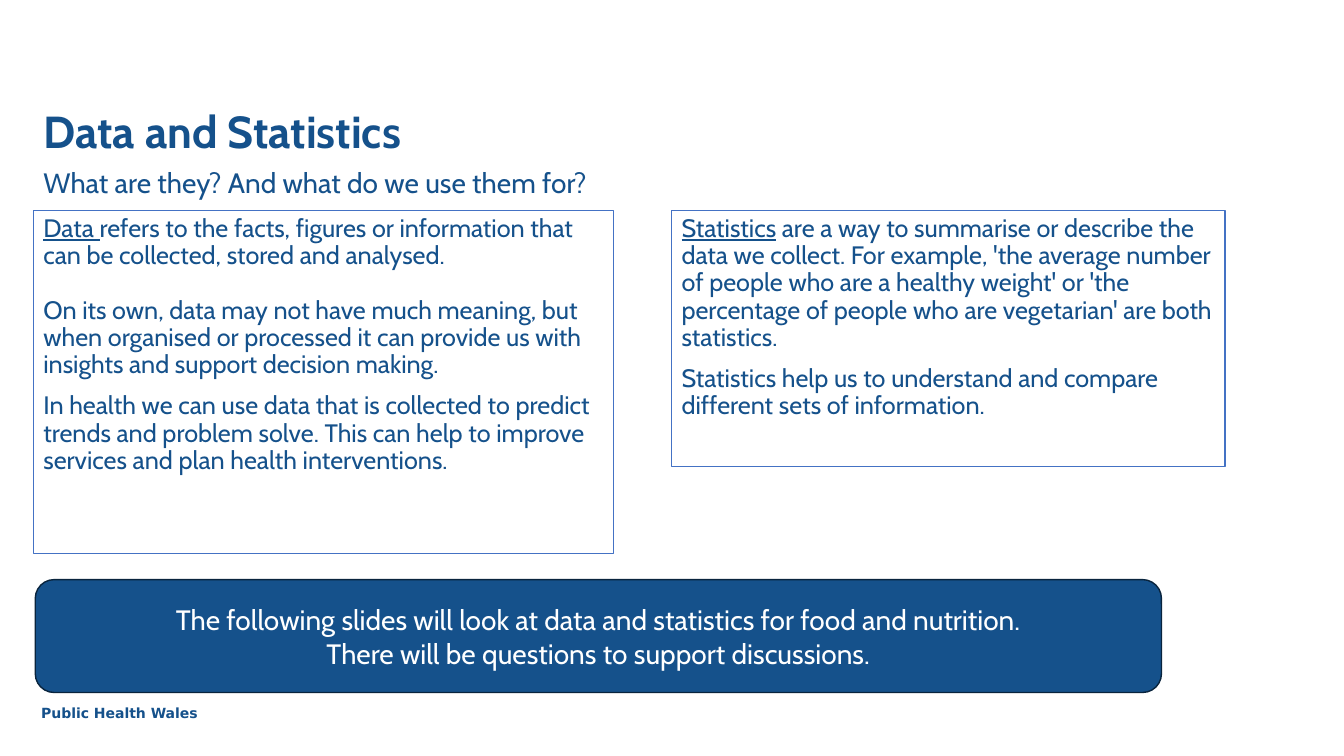
from pptx import Presentation
from pptx.dml.color import RGBColor
from pptx.enum.shapes import MSO_SHAPE
from pptx.enum.text import MSO_ANCHOR, MSO_AUTO_SIZE, PP_ALIGN
from pptx.oxml import parse_xml
from pptx.oxml.ns import nsdecls
from pptx.util import Inches, Pt

NAVY, OUTLINE, BANNER_EDGE, WHITE = "15518B", "4472C4", "09243D", "FFFFFF"


def color(hex_value):
    return RGBColor.from_string(hex_value)


def fill_text(shape, place, paragraphs, size, ink=NAVY, font="Cabin", bold=False,
              anchor=MSO_ANCHOR.TOP, align=PP_ALIGN.LEFT, line_spacing=0.9):
    """Place a shape and write (space before, [(text, underlined), ...]) paragraphs."""
    shape.left, shape.top, shape.width, shape.height = map(Inches, place)
    frame = shape.text_frame
    frame.word_wrap = True
    frame.auto_size = MSO_AUTO_SIZE.NONE
    frame.vertical_anchor = anchor
    for number, (gap, runs) in enumerate(paragraphs):
        paragraph = frame.add_paragraph() if number else frame.paragraphs[0]
        properties = paragraph._p.get_or_add_pPr()
        properties.set("marL", "0")
        properties.set("indent", "0")
        properties.append(parse_xml(f"<a:buNone {nsdecls('a')}/>"))
        paragraph.alignment = align
        paragraph.line_spacing = line_spacing
        paragraph.space_before = Pt(gap)
        paragraph.font.name = font
        paragraph.font.size = Pt(size)
        paragraph.font.bold = bold
        paragraph.font.color.rgb = color(ink)
        for text, underlined in runs:
            run = paragraph.add_run()
            run.text = text
            if underlined:
                run.font.underline = True


deck = Presentation()
deck.slide_width, deck.slide_height = Inches(13.33), Inches(7.5)
slide = deck.slides.add_slide(deck.slide_layouts.get_by_name("Comparison"))
title, subtitle, data_box, spare, statistics_box = slide.placeholders
spare.element.getparent().remove(spare.element)

fill_text(title, (0.33, 0.89, 4.85, 0.73), [(0, [("Data and Statistics", False)])],
          32, bold=True, anchor=MSO_ANCHOR.BOTTOM)
fill_text(subtitle, (0.33, 1.63, 6.7, 0.4),
          [(0, [("What are they? And what do we use them for?", False)])], 20)

definitions = [
    (data_box, (0.33, 2.09, 5.76, 3.4), [
        (0, [("Data ", True),
             ("refers to the facts, figures or information that can be collected, "
              "stored and analysed.", False)]),
        (19.5, [("On its own, data may not have much meaning, but when organised or "
                 "processed it can provide us with insights and support decision making.",
                 False)]),
        (10, [("In health we can use data that is collected to predict trends and problem "
               "solve. This can help to improve services and plan health interventions.",
               False)]),
    ]),
    (statistics_box, (6.66, 2.09, 5.49, 2.54), [
        (0, [("Statistics", True),
             (" are a way to summarise or describe the data we collect. For example, "
              "'the average number of people who are a healthy weight' or 'the percentage "
              "of people who are vegetarian' are both statistics.", False)]),
        (10, [("Statistics help us to understand and compare different sets of "
               "information.", False)]),
    ]),
]
for box, place, paragraphs in definitions:
    fill_text(box, place, paragraphs, 18)
    box.line.color.rgb = color(OUTLINE)
    box.line.width = Pt(0.75)

banner = slide.shapes.add_shape(MSO_SHAPE.ROUNDED_RECTANGLE, 0, 0, 0, 0)
banner.shadow.inherit = False
banner.fill.solid()
banner.fill.fore_color.rgb = color(NAVY)
banner.line.color.rgb = color(BANNER_EDGE)
banner.line.width = Pt(1)
fill_text(banner, (0.35, 5.75, 11.17, 1.12), [
    (0, [("The following slides will look at data and statistics for food and nutrition.",
          False)]),
    (0, [("There will be questions to support discussions.", False)]),
], 20, ink=WHITE, anchor=MSO_ANCHOR.MIDDLE, align=PP_ALIGN.CENTER, line_spacing=1.0)

footer = slide.shapes.add_textbox(0, 0, 0, 0)
fill_text(footer, (0.31, 6.94, 1.81, 0.27), [(0, [("Public Health Wales", False)])],
          10, font="DejaVu Sans", bold=True, line_spacing=1.0)

deck.save("out.pptx")
